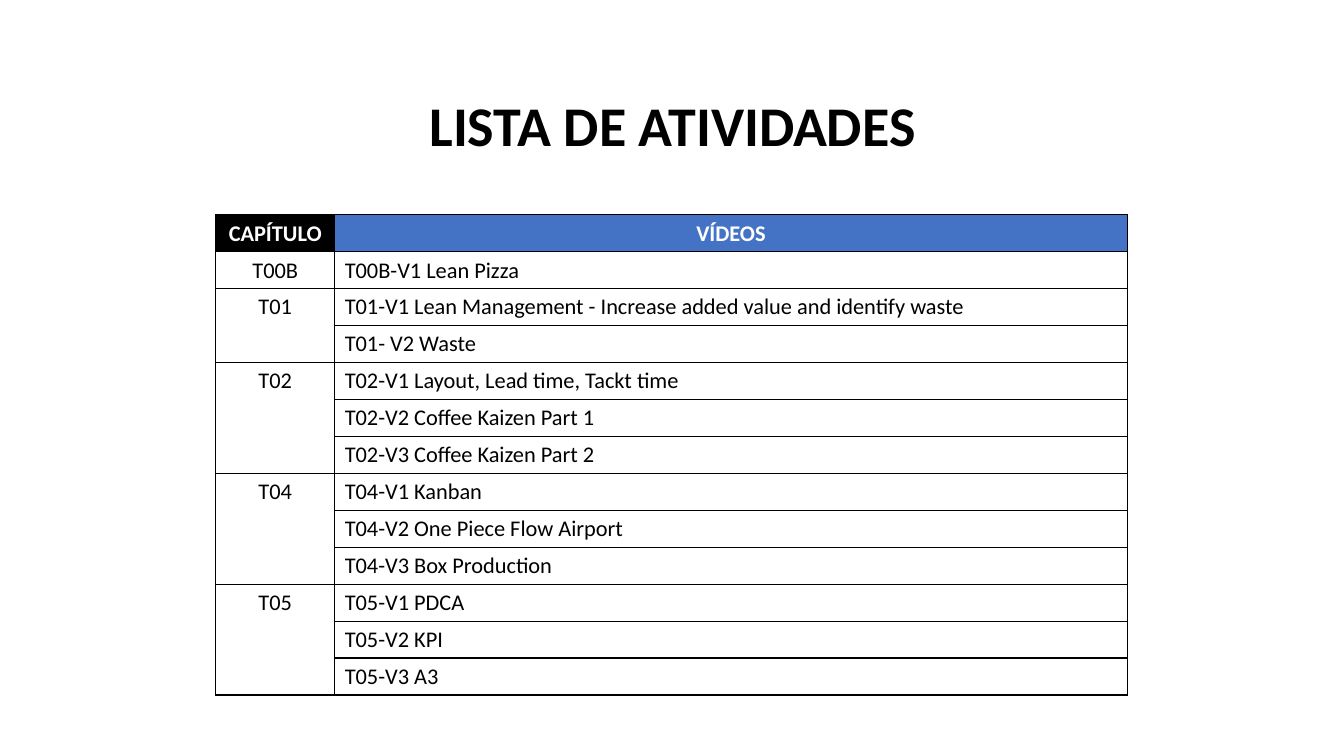
from lxml import etree
from pptx import Presentation
from pptx.dml.color import RGBColor
from pptx.enum.text import MSO_AUTO_SIZE, PP_ALIGN
from pptx.oxml.ns import qn
from pptx.util import Inches, Pt

CENTER, LEFT = PP_ALIGN.CENTER, PP_ALIGN.LEFT
FIT = MSO_AUTO_SIZE.SHAPE_TO_FIT_TEXT
COLORS = {"black": "000000", "white": "FFFFFF", "blue": "4472C4"}
FORMATS = {
    "title": {"name": "Calibri", "size": Pt(40), "bold": True},
    "head": {"name": "Calibri", "size": Pt(16), "bold": True},
    "body": {"name": "Calibri", "size": Pt(16), "bold": False},
}
MARGINS = {
    "margin_left": Inches(0.1),
    "margin_right": Inches(0.1),
    "margin_top": Inches(0.05),
    "margin_bottom": Inches(0.04),
}
HEADS = [("CAPÍTULO", "black"), ("VÍDEOS", "blue")]
VIDEOS = {
    "T00B": ["T00B-V1 Lean Pizza"],
    "T01": [
        "T01-V1 Lean Management - Increase added value and identify waste",
        "T01- V2 Waste",
    ],
    "T02": [
        "T02-V1 Layout, Lead time, Tackt time",
        "T02-V2 Coffee Kaizen Part 1",
        "T02-V3 Coffee Kaizen Part 2",
    ],
    "T04": [
        "T04-V1 Kanban",
        "T04-V2 One Piece Flow Airport",
        "T04-V3 Box Production",
    ],
    "T05": ["T05-V1 PDCA", "T05-V2 KPI", "T05-V3 A3"],
}


def rgb(name):
    return RGBColor.from_string(COLORS[name])


def write(frame, text, style, color, align):
    para = frame.paragraphs[0]
    para.alignment = align
    run = para.add_run()
    run.text = text
    for key, value in FORMATS[style].items():
        setattr(run.font, key, value)
    run.font.color.rgb = rgb(color)


def rule(cell):
    """Draw a thin black line on all four sides of the cell."""
    props = cell._tc.get_or_add_tcPr()
    for spot, side in enumerate(("lnL", "lnR", "lnT", "lnB")):
        line = etree.Element(qn(f"a:{side}"), w=str(Pt(1)))
        fill = etree.SubElement(line, qn("a:solidFill"))
        etree.SubElement(fill, qn("a:srgbClr"), val=COLORS["black"])
        props.insert(spot, line)


def style_cell(cell, fill):
    for key, value in MARGINS.items():
        setattr(cell, key, value)
    cell.fill.solid()
    cell.fill.fore_color.rgb = rgb(fill)
    rule(cell)


def add_title(slide, left, top, width, height):
    box = slide.shapes.add_textbox(*map(Inches, (left, top, width, height)))
    frame = box.text_frame
    frame.word_wrap = True
    frame.auto_size = FIT
    write(frame, "LISTA DE ATIVIDADES", "title", "black", CENTER)


def add_list(slide, left, top, width, height):
    """Fill the box with a table of videos, grouped by chapter."""
    count = 1 + sum(map(len, VIDEOS.values()))
    box = map(Inches, (left, top, width, height))
    table = slide.shapes.add_table(count, len(HEADS), *box).table
    first = 1.18
    table.columns[0].width = Inches(first)
    table.columns[1].width = Inches(width - first)
    for cell in table.iter_cells():
        style_cell(cell, "white")
        write(cell.text_frame, "", "body", "black", LEFT)

    for col, (text, fill) in enumerate(HEADS):
        cell = table.cell(0, col)
        cell.fill.fore_color.rgb = rgb(fill)
        write(cell.text_frame, text, "head", "white", CENTER)

    row = 1
    for name, videos in VIDEOS.items():
        start = table.cell(row, 0)
        if len(videos) > 1:
            start.merge(table.cell(row + len(videos) - 1, 0))
        write(start.text_frame, name, "body", "black", CENTER)
        for video in videos:
            frame = table.cell(row, 1).text_frame
            write(frame, video, "body", "black", LEFT)
            row += 1


def main():
    deck = Presentation()
    deck.slide_width, deck.slide_height = Inches(13.33), Inches(7.5)
    slide = deck.slides.add_slide(deck.slide_layouts[6])
    add_list(slide, 2.14, 2.13, 9.04, 4.77)
    add_title(slide, 2.51, 0.85, 8.32, 0.77)
    deck.save("out.pptx")


if __name__ == "__main__":
    main()
